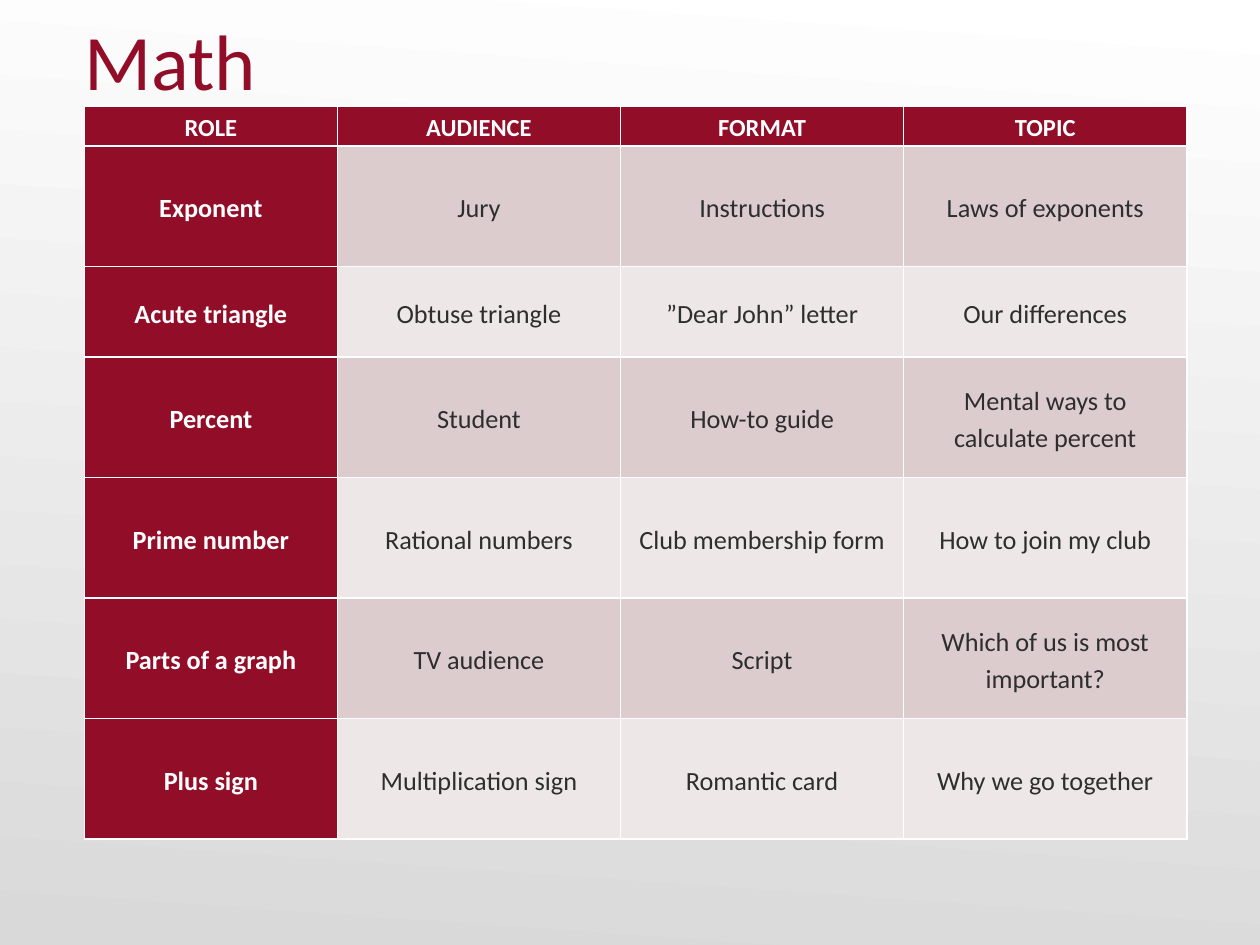
from lxml.etree import SubElement
from pptx import Presentation
from pptx.dml.color import RGBColor
from pptx.enum.text import MSO_ANCHOR as Anchor, PP_ALIGN as Align
from pptx.oxml.ns import qn
from pptx.util import Inches, Pt

CRIMSON = RGBColor(0x91, 0x0D, 0x28)
WHITE = RGBColor(0xFF, 0xFF, 0xFF)
GREY = RGBColor(0xD9, 0xD9, 0xD9)
INK = RGBColor(0x2E, 0x2E, 0x2E)
BANDS = RGBColor(0xDC, 0xCC, 0xCD), RGBColor(0xEE, 0xE7, 0xE8)
FONT = "Calibri"

COLUMN_WIDTHS = [2.01, 2.25, 2.25, 2.25]
ROW_HEIGHTS = [0.32, 0.96, 0.72, 0.96, 0.96, 0.96, 0.96]
PROMPTS = [
    ("ROLE", "AUDIENCE", "FORMAT", "TOPIC"),
    ("Exponent", "Jury", "Instructions", "Laws of exponents"),
    ("Acute triangle", "Obtuse triangle", "”Dear John” letter", "Our differences"),
    ("Percent", "Student", "How-to guide", "Mental ways to calculate percent"),
    ("Prime number", "Rational numbers", "Club membership form", "How to join my club"),
    ("Parts of a graph", "TV audience", "Script", "Which of us is most important?"),
    ("Plus sign", "Multiplication sign", "Romantic card", "Why we go together"),
]


def style_font(paragraph, size, color, bold=False):
    for run in paragraph.runs:
        font = run.font
        font.name, font.size, font.bold = FONT, Pt(size), bold
        font.color.rgb = color


def paint_background(slide):
    fill = slide.background.fill
    fill.gradient()
    fill.gradient_angle = 266
    for stop, color, position in zip(fill.gradient_stops, (WHITE, GREY), (0, 1)):
        stop.color.rgb = color
        stop.position = position


def add_title(slide, left, top, width, height):
    frame = slide.shapes.add_textbox(left, top, width, height).text_frame
    frame.word_wrap = True
    frame.vertical_anchor = Anchor.BOTTOM
    frame.margin_left = frame.margin_right = frame.margin_bottom = 0
    frame.margin_top = Inches(0.07)
    frame.text = "Math"
    style_font(frame.paragraphs[0], 44.9, CRIMSON)


def add_borders(cell):
    properties = cell._tc.get_or_add_tcPr()
    for side in ("a:lnL", "a:lnR", "a:lnT", "a:lnB"):
        line = SubElement(properties, qn(side), w=str(Pt(1)))
        SubElement(SubElement(line, qn("a:solidFill")), qn("a:srgbClr"), val=str(WHITE))


def fill_cell(cell, text, row, column):
    is_heading = row == 0 or column == 0
    add_borders(cell)
    cell.fill.solid()
    cell.fill.fore_color.rgb = CRIMSON if is_heading else BANDS[(row - 1) % 2]
    cell.vertical_anchor = Anchor.MIDDLE
    cell.margin_left = cell.margin_right = Inches(0.12)
    cell.margin_top = cell.margin_bottom = 0
    cell.text = text
    paragraph = cell.text_frame.paragraphs[0]
    paragraph.alignment = Align.CENTER
    paragraph.line_spacing = 1.15
    style_font(paragraph, 14 if row == 0 else 15, WHITE if is_heading else INK, is_heading)


def add_prompt_table(slide, left, top, width, height):
    table = slide.shapes.add_table(
        len(PROMPTS), len(PROMPTS[0]), left, top, width, height).table
    table.horz_banding = False
    # Share the box out in proportion to the column and row sizes
    for column, share in zip(table.columns, COLUMN_WIDTHS):
        column.width = int(width * share / sum(COLUMN_WIDTHS))
    for row, share in zip(table.rows, ROW_HEIGHTS):
        row.height = int(height * share / sum(ROW_HEIGHTS))
    for r, prompt in enumerate(PROMPTS):
        for c, text in enumerate(prompt):
            fill_cell(table.cell(r, c), text, r, c)


def main():
    deck = Presentation()
    deck.slide_width, deck.slide_height = Inches(10), Inches(7.5)
    slide = deck.slides.add_slide(deck.slide_layouts[6])
    paint_background(slide)
    margin, table_top = Inches(0.67), Inches(0.84)
    add_title(slide, margin, Inches(0.17), Inches(5.42), Inches(0.67))
    add_prompt_table(slide, margin, table_top, Inches(8.75), Inches(5.82))
    deck.save("out.pptx")


if __name__ == "__main__":
    main()
